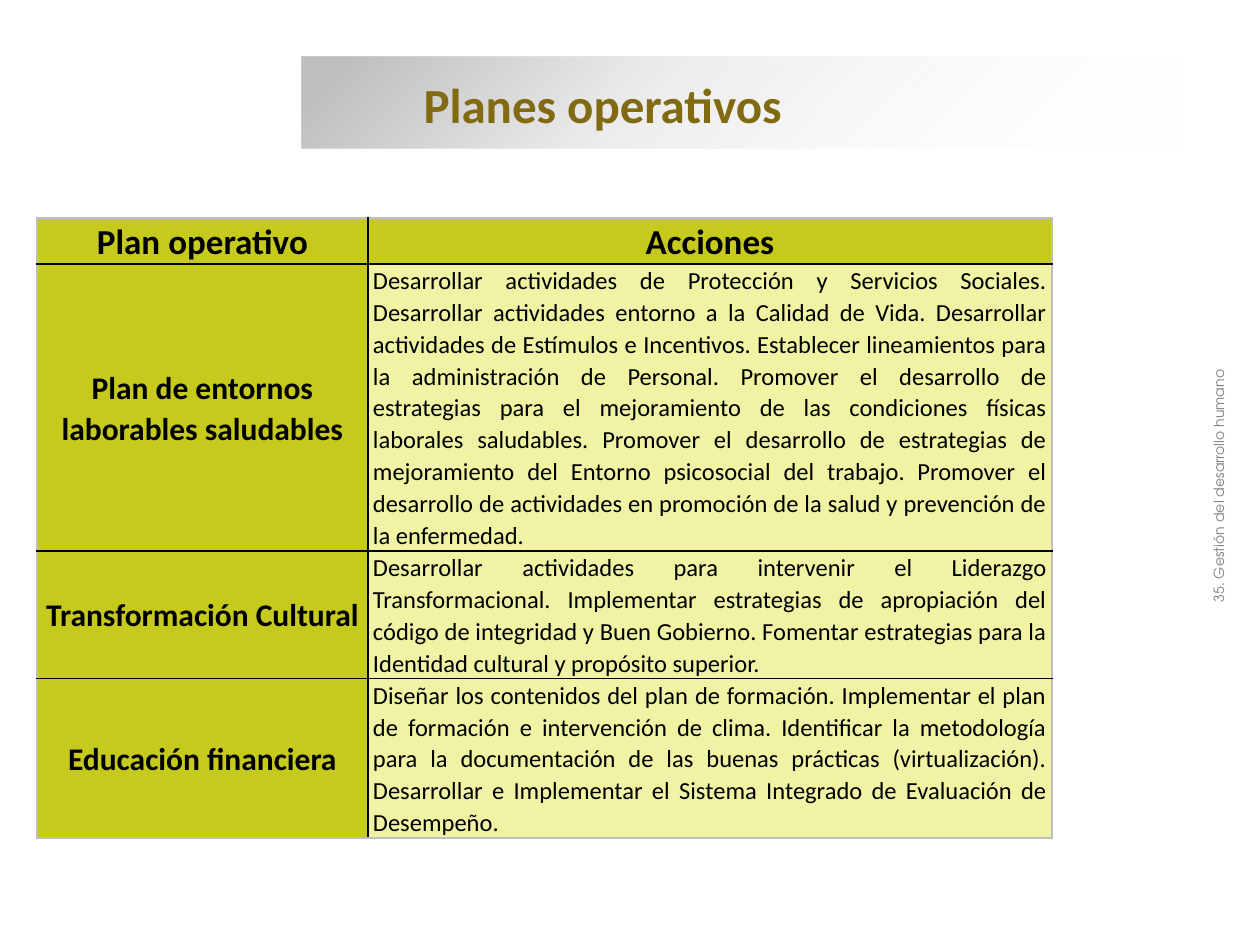
import pptx
import pptx.util
import pptx.dml.color
import pptx.enum.shapes
import pptx.enum.text
import pptx.oxml
import pptx.oxml.ns

SCALE = 914400 / 126
COLORS = {
    "band": "BFBFBF",
    "white": "FFFFFF",
    "title": "826A12",
    "label": "C6CA1C",
    "action": "F0F2A4",
    "black": "000000",
    "edge": "BFBFBF",
    "footer": "808080",
}
ALIGN = pptx.enum.text.PP_ALIGN
MIDDLE = pptx.enum.text.MSO_ANCHOR.MIDDLE
COLS = [331, 684]
ROWS = [45, 283, 126, 157]
PLANS = [
    ("Plan operativo", "Acciones"),
    ("Plan de entornos laborables saludables",
     "Desarrollar actividades de Protección y Servicios Sociales. Desarrollar actividades "
     "entorno a la Calidad de Vida. Desarrollar actividades de Estímulos e Incentivos. "
     "Establecer lineamientos para la administración de Personal. Promover el desarrollo de "
     "estrategias para el mejoramiento de las condiciones físicas laborales saludables. "
     "Promover el desarrollo de estrategias de mejoramiento del Entorno psicosocial del "
     "trabajo. Promover el desarrollo de actividades en promoción de la salud y prevención "
     "de la enfermedad."),
    ("Transformación Cultural",
     "Desarrollar actividades para intervenir el Liderazgo Transformacional. Implementar "
     "estrategias de apropiación del código de integridad y Buen Gobierno. Fomentar "
     "estrategias para la Identidad cultural y propósito superior."),
    ("Educación financiera",
     "Diseñar los contenidos del plan de formación. Implementar el plan de formación e "
     "intervención de clima. Identificar la metodología para la documentación de las buenas "
     "prácticas (virtualización). Desarrollar e Implementar el Sistema Integrado de "
     "Evaluación de Desempeño."),
]


def px(n):
    return pptx.util.Emu(round(n * SCALE))


def rgb(name):
    return pptx.dml.color.RGBColor.from_string(COLORS[name])


def xml(tag, body):
    ns = pptx.oxml.ns.nsdecls("a")
    return pptx.oxml.parse_xml(f"<a:{tag} {ns}>{body}</a:{tag.split()[0]}>")


def write(tf, text, size, color, align, font="Calibri", bold=False):
    p = tf.paragraphs[0]
    p.text = text
    p.alignment = align
    p.font.name = font
    p.font.size = pptx.util.Pt(size)
    p.font.bold = bold
    p.font.color.rgb = rgb(color)
    return p


def add_band(s):
    sp = s.shapes.add_shape(pptx.enum.shapes.MSO_SHAPE.RECTANGLE,
                            px(302), px(57), px(879), px(91))
    sp.shadow.inherit = False
    sp.line.fill.background()
    sp.fill.gradient()
    sp.fill.gradient_angle = 315
    stops = sp._element.spPr.find(".//" + pptx.oxml.ns.qn("a:gsLst"))
    for stop in list(stops):
        stops.remove(stop)
    for pos, color, alpha in [(5, "band", 100), (37, "band", 31), (100, "white", 0)]:
        stops.append(xml(f'gs pos="{pos * 1000}"',
                         f'<a:srgbClr val="{COLORS[color]}">'
                         f'<a:alpha val="{alpha * 1000}"/></a:srgbClr>'))


def set_title(s, text):
    sp = s.shapes.title
    sp.left, sp.top, sp.width, sp.height = px(411), px(68), px(781), px(72)
    sp.text_frame.vertical_anchor = MIDDLE
    write(sp.text_frame, text, 28, "title", ALIGN.LEFT, bold=True)
    s.shapes._spTree.append(sp._element)


def set_borders(cell, outer):
    tc_pr = cell._tc.get_or_add_tcPr()
    for side in "LRTB":
        color = COLORS["edge" if side in outer else "black"]
        tc_pr.append(xml(f'ln{side} w="12700"',
                         f'<a:solidFill><a:srgbClr val="{color}"/></a:solidFill>'))


def fill_cell(cell, text, row, col):
    is_action = row > 0 and col == 1
    outer = ("L" if col == 0 else "R") + {0: "T", len(PLANS) - 1: "B"}.get(row, "")
    set_borders(cell, outer)
    cell.fill.solid()
    cell.fill.fore_color.rgb = rgb("action" if is_action else "label")
    cell.margin_left = cell.margin_right = px(5)
    cell.margin_top = cell.margin_bottom = 0
    cell.vertical_anchor = MIDDLE
    size = 20 if row == 0 else 14 if is_action else 18
    align = ALIGN.JUSTIFY if is_action else ALIGN.CENTER
    p = write(cell.text_frame, text, size, "black", align, bold=not is_action)
    p.line_spacing = 1.07


def add_plans(s):
    table = s.shapes.add_table(len(ROWS), len(COLS), px(37), px(218),
                               px(sum(COLS)), px(sum(ROWS))).table
    table.horz_banding = False
    for column, width in zip(table.columns, COLS):
        column.width = px(width)
    for i, (height, texts) in enumerate(zip(ROWS, PLANS)):
        table.rows[i].height = px(height)
        for j, text in enumerate(texts):
            fill_cell(table.cell(i, j), text, i, j)


def add_side_label(s, text):
    sp = s.shapes.add_textbox(px(914), px(471), px(610), px(30))
    sp.rotation = 270
    sp.text_frame.word_wrap = True
    write(sp.text_frame, text, 8, "footer", ALIGN.CENTER, "TeX Gyre Adventor")


def main():
    prs = pptx.Presentation()
    prs.slide_width, prs.slide_height = px(1260), px(945)
    s = prs.slides.add_slide(prs.slide_layouts[5])
    add_band(s)
    set_title(s, "Planes operativos")
    add_plans(s)
    add_side_label(s, "35. Gestión del desarrollo humano")
    prs.save("out.pptx")


if __name__ == "__main__":
    main()
